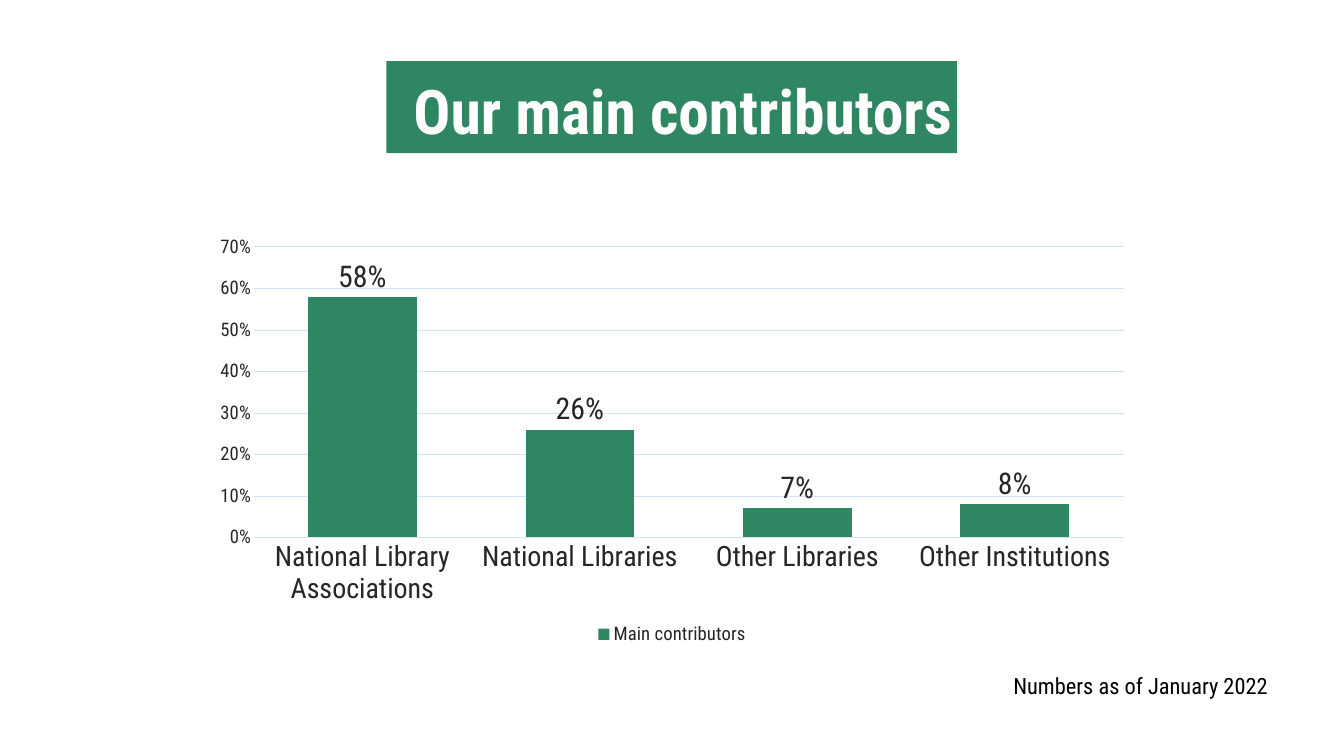
from dataclasses import dataclass

from pptx import Presentation
from pptx.chart.data import CategoryChartData
from pptx.dml.color import RGBColor
from pptx.enum.chart import XL_CHART_TYPE as Kind
from pptx.enum.chart import XL_LABEL_POSITION as LabelPos
from pptx.enum.chart import XL_LEGEND_POSITION as LegendPos
from pptx.enum.chart import XL_TICK_MARK as Tick
from pptx.enum.shapes import MSO_SHAPE as Shape
from pptx.enum.text import MSO_AUTO_SIZE as AutoSize
from pptx.util import Pt


@dataclass(frozen=True)
class Theme:
    face: str = "Roboto Condensed"
    green: str = "2F8662"
    white: str = "FFFFFF"
    black: str = "000000"
    ink: str = "262626"
    grid: str = "D4E3F4"
    title: int = 66
    value: int = 32
    label: int = 30
    note: int = 24
    small: int = 20


THEME = Theme()
SHARES = {
    "National Library Associations": 0.58,
    "National Libraries": 0.26,
    "Other Libraries": 0.07,
    "Other Institutions": 0.08,
}


def rgb(code):
    return RGBColor.from_string(code)


def style(font, size, color, bold=False):
    font.name = THEME.face
    font.size = Pt(size)
    font.color.rgb = rgb(color)
    font.bold = bold


def rule(line):
    line.color.rgb = rgb(THEME.grid)
    line.width = Pt(0.75)


def add_text(slide, box, text, size, color, bold=False):
    frame = slide.shapes.add_textbox(*map(Pt, box)).text_frame
    frame.word_wrap = True
    frame.auto_size = AutoSize.SHAPE_TO_FIT_TEXT
    para = frame.paragraphs[0]
    para.text = text
    style(para.font, size, color, bold)
    return frame


def add_title(slide, box, text):
    """Green band with the heading set in from its left edge."""
    left, top, width, height = box
    band = slide.shapes.add_shape(Shape.RECTANGLE, *map(Pt, box))
    band.shadow.inherit = False
    band.fill.solid()
    band.fill.fore_color.rgb = rgb(THEME.green)
    band.line.fill.background()

    area = (left, top + 7.2, width + 48, height - 17.3)
    frame = add_text(slide, area, text, THEME.title, THEME.white, True)
    frame.margin_left = Pt(29)
    frame.margin_top = frame.margin_right = frame.margin_bottom = 0
    frame.paragraphs[0].line_spacing = Pt(84.5)


def style_axes(chart):
    cats, vals = chart.category_axis, chart.value_axis
    for axis, size in ((cats, THEME.label), (vals, THEME.small)):
        axis.major_tick_mark = axis.minor_tick_mark = Tick.NONE
        style(axis.tick_labels.font, size, THEME.ink)
    rule(cats.format.line)
    vals.format.line.fill.background()
    vals.has_major_gridlines = True
    rule(vals.major_gridlines.format.line)
    vals.minimum_scale, vals.maximum_scale = 0, 0.7
    vals.major_unit = 0.1
    vals.tick_labels.number_format = "0%"
    vals.tick_labels.number_format_is_linked = False


def add_bars(slide, box, name, shares):
    data = CategoryChartData(number_format="0%")
    data.categories = list(shares)
    data.add_series(name, list(shares.values()))
    chart = slide.shapes.add_chart(
        Kind.COLUMN_CLUSTERED, *map(Pt, box), data).chart
    style(chart.font, THEME.small, THEME.black)
    chart.has_title = False
    style_axes(chart)

    chart.has_legend = True
    chart.legend.position = LegendPos.BOTTOM
    chart.legend.include_in_layout = False
    style(chart.legend.font, THEME.small, THEME.ink)

    plot = chart.plots[0]
    plot.vary_by_categories = False
    plot.gap_width, plot.overlap = 100, -24
    bars = plot.series[0]
    bars.format.fill.solid()
    bars.format.fill.fore_color.rgb = rgb(THEME.green)
    labels = bars.data_labels
    labels.show_value = True
    labels.position = LabelPos.OUTSIDE_END
    labels.number_format = "0%"
    labels.number_format_is_linked = False
    style(labels.font, THEME.value, THEME.ink)


def main():
    deck = Presentation()
    deck.slide_width, deck.slide_height = Pt(1440), Pt(810)
    slide = deck.slides.add_slide(deck.slide_layouts[6])
    add_title(slide, (414, 65.5, 611.3, 98.6), "Our main contributors")
    add_bars(slide, (216, 243.4, 1008, 452.2), "Main contributors", SHARES)
    add_text(slide, (1078.6, 717.1, 290.2, 36),
             "Numbers as of January 2022", THEME.note, THEME.black)
    deck.save("out.pptx")


if __name__ == "__main__":
    main()
